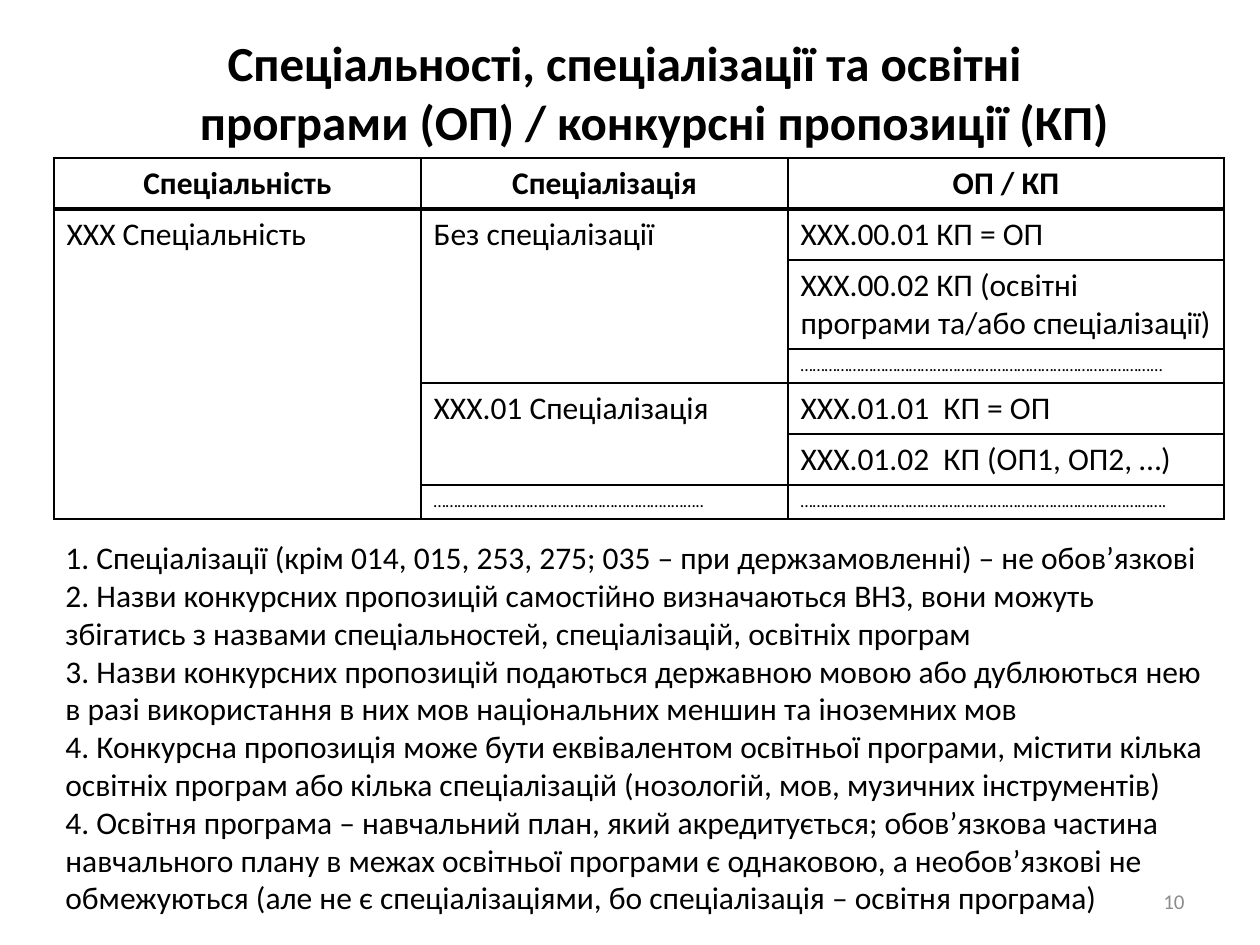
from lxml.etree import SubElement
from pptx import Presentation
from pptx.dml.color import RGBColor
from pptx.enum.text import MSO_ANCHOR, PP_ALIGN
from pptx.oxml.ns import qn
from pptx.util import Emu, Pt

PX = 914400 // 126
BLACK = RGBColor(0x00, 0x00, 0x00)
WHITE = RGBColor(0xFF, 0xFF, 0xFF)
GRAY = RGBColor(0x8C, 0x8C, 0x8C)

TITLE = "Спеціальності, спеціалізації та освітні \vпрограми (ОП) / конкурсні пропозиції (КП)"
HEADERS = ["Спеціальність", "Спеціалізація", "ОП / КП"]
COLUMNS = [367, 367, 436]
ROWS = [51, 51, 89, 34, 51, 51, 34]
# (row, column, row span, text)
BODY = [
    (1, 0, 6, "ХХХ Спеціальність"),
    (1, 1, 3, "Без спеціалізації"),
    (4, 1, 2, "ХХХ.01 Спеціалізація"),
    (6, 1, 1, "…………………………………………………..…….."),
    (1, 2, 1, "ХХХ.00.01 КП = ОП"),
    (2, 2, 1, "ХХХ.00.02 КП (освітні програми та/або спеціалізації)"),
    (3, 2, 1, "……………………………………………………………………………..."),
    (4, 2, 1, "ХХХ.01.01  КП = ОП"),
    (5, 2, 1, "ХХХ.01.02  КП (ОП1, ОП2, …)"),
    (6, 2, 1, "………………………………………………………………………………."),
]
NOTES = [
    "1. Спеціалізації (крім 014, 015, 253, 275; 035 – при держзамовленні) – не обов’язкові",
    "2. Назви конкурсних пропозицій самостійно визначаються ВНЗ, вони можуть "
    "збігатись з назвами спеціальностей, спеціалізацій, освітніх програм",
    "3. Назви конкурсних пропозицій подаються державною мовою або дублюються нею "
    "в разі використання в них мов національних меншин та іноземних мов",
    "4. Конкурсна пропозиція може бути еквівалентом освітньої програми, містити кілька "
    "освітніх програм або кілька спеціалізацій (нозологій, мов, музичних інструментів)",
    "4. Освітня програма – навчальний план, який акредитується; обов’язкова частина "
    "навчального плану в межах освітньої програми є однаковою, а необов’язкові не "
    "обмежуються (але не є спеціалізаціями, бо спеціалізація – освітня програма)",
]


def px(n):
    return Emu(n * PX)


def write(tf, *lines, size=18, bold=False, color=BLACK, align=PP_ALIGN.LEFT,
          font="Calibri", hang=0):
    """Fill a text frame, one paragraph per line; hang is a hanging indent in px."""
    for i, line in enumerate(lines):
        p = tf.add_paragraph() if i else tf.paragraphs[0]
        p.text = line
        p.alignment = align
        if hang:
            pPr = p._p.get_or_add_pPr()
            pPr.set("marL", str(px(hang)))
            pPr.set("indent", str(-px(hang)))
        for r in p.runs:
            r.font.name = font
            r.font.size = Pt(size)
            r.font.bold = bold
            r.font.color.rgb = color


def set_borders(cell, top=1, bottom=1):
    tcPr = cell._tc.get_or_add_tcPr()
    for tag, width in (("lnL", 1), ("lnR", 1), ("lnT", top), ("lnB", bottom)):
        ln = SubElement(tcPr, qn(f"a:{tag}"), w=str(Pt(width)))
        fill = SubElement(ln, qn("a:solidFill"))
        SubElement(fill, qn("a:srgbClr"), val=str(BLACK))


class Deck:
    def __init__(self):
        self.prs = Presentation()
        self.prs.slide_width = px(1260)
        self.prs.slide_height = px(945)
        self.s = self.prs.slides.add_slide(self.prs.slide_layouts[6])

    def text(self, x, y, w, h, *lines, anchor=MSO_ANCHOR.TOP, **fmt):
        tf = self.s.shapes.add_textbox(px(x), px(y), px(w), px(h)).text_frame
        tf.word_wrap = True
        tf.vertical_anchor = anchor
        write(tf, *lines, **fmt)

    def table(self, x, y, columns, rows, headers, body):
        table = self.s.shapes.add_table(
            len(rows), len(columns), px(x), px(y), px(sum(columns)), px(sum(rows))).table
        table.first_row = table.horz_banding = False
        for column, w in zip(table.columns, columns):
            column.width = px(w)
        for i, (row, h) in enumerate(zip(table.rows, rows)):
            row.height = px(h)
            for cell in row.cells:
                set_borders(cell, top=3 if i == 1 else 1, bottom=3 if i == 0 else 1)
                cell.fill.solid()
                cell.fill.fore_color.rgb = WHITE
        for c, label in enumerate(headers):
            write(table.cell(0, c).text_frame, label, bold=True, align=PP_ALIGN.CENTER)
        for r, c, span, label in body:
            cell = table.cell(r, c)
            if span > 1:
                cell.merge(table.cell(r + span - 1, c))
            write(cell.text_frame, label, size=10 if label.startswith("…") else 18)


def main():
    deck = Deck()
    deck.text(15, 38, 1230, 107, TITLE, anchor=MSO_ANCHOR.MIDDLE, size=28, bold=True,
              align=PP_ALIGN.CENTER, hang=48)
    deck.table(54, 158, COLUMNS, ROWS, HEADERS, BODY)
    deck.text(903, 876, 294, 50, "10", anchor=MSO_ANCHOR.MIDDLE, size=12, color=GRAY,
              align=PP_ALIGN.RIGHT)
    deck.text(53, 532, 1170, 394, *NOTES)
    deck.prs.save("out.pptx")


if __name__ == "__main__":
    main()
